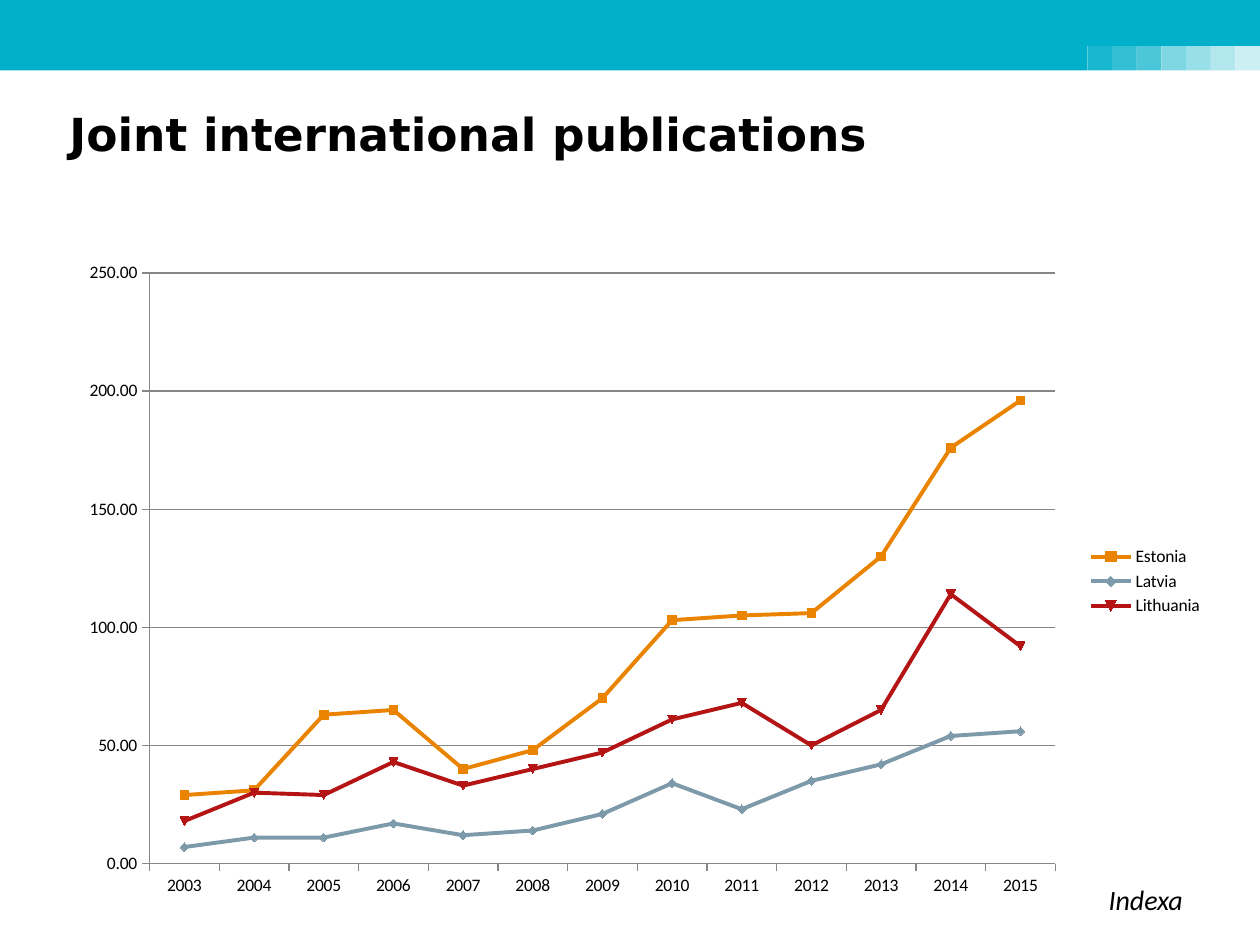
from dataclasses import dataclass

from lxml import etree
from pptx import Presentation
from pptx.chart.data import CategoryChartData
from pptx.dml.color import RGBColor
from pptx.enum import chart as ch, shapes, text
from pptx.oxml.ns import qn
from pptx.util import Pt


@dataclass(frozen=True)
class Theme:
    """Colours, fonts and type sizes of the slide."""
    band: RGBColor = RGBColor.from_string("00B0CA")
    ink: RGBColor = RGBColor.from_string("000000")
    axis: RGBColor = RGBColor.from_string("868686")
    heading: str = "DejaVu Sans"
    body: str = "Calibri"
    title_size: int = 26
    source_size: int = 16
    chart_size: int = 10


THEME = Theme()
YEARS = [str(year) for year in range(2003, 2016)]
COUNTRIES = {
    "Estonia": ("E98300", (29, 31, 63, 65, 40, 48, 70, 103, 105, 106, 130, 176, 196)),
    "Latvia": ("7D9AAA", (7, 11, 11, 17, 12, 14, 21, 34, 23, 35, 42, 54, 56)),
    "Lithuania": ("B41414", (18, 30, 29, 43, 33, 40, 47, 61, 68, 50, 65, 114, 92)),
}
FADE = (90, 80, 70, 50, 40, 30, 20)


def paint(sp, color, opacity=100):
    """Give a shape a flat fill with no line or shadow."""
    sp.shadow.inherit = False
    sp.line.fill.background()
    sp.fill.solid()
    sp.fill.fore_color.rgb = color
    if opacity < 100:
        clr = sp.fill._xPr.find(".//" + qn("a:srgbClr"))
        etree.SubElement(clr, qn("a:alpha")).set("val", str(opacity * 1000))


def add_band(s, x, y, w, h):
    """Draw the top band with its fading squares in the lower right notch."""
    side = 14.1
    notch_x, notch_y = x + w - side * len(FADE), y + h - side
    corners = [(x, y + h), (notch_x, y + h), (notch_x, notch_y),
               (x + w, notch_y), (x + w, y)]
    outline = s.shapes.build_freeform(Pt(x), Pt(y))
    outline.add_line_segments([(Pt(a), Pt(b)) for a, b in corners])
    paint(outline.convert_to_shape(), THEME.band)
    for i, opacity in enumerate(FADE):
        square = s.shapes.add_shape(
            shapes.MSO_SHAPE.RECTANGLE, Pt(notch_x + i * side), Pt(notch_y), Pt(side), Pt(side))
        paint(square, THEME.band, opacity)


def add_label(s, x, y, w, h, words, font, size, margin, wrap=True, bold=False, italic=False):
    """Place one line of text in a box."""
    tf = s.shapes.add_textbox(Pt(x), Pt(y), Pt(w), Pt(h)).text_frame
    tf.word_wrap = wrap
    tf.vertical_anchor = text.MSO_ANCHOR.TOP
    tf.margin_left = tf.margin_right = Pt(margin)
    tf.margin_top = tf.margin_bottom = Pt(3)
    r = tf.paragraphs[0].add_run()
    r.text = words
    r.font.name, r.font.size = font, Pt(size)
    r.font.bold, r.font.italic = bold, italic
    r.font.color.rgb = THEME.ink


def set_plot_area(chart, **fractions):
    """Fix the inner plot area as fractions of the chart."""
    area = chart._chartSpace.chart.plotArea
    for old in area.findall(qn("c:layout")):
        area.remove(old)
    layout = etree.Element(qn("c:layout"))
    manual = etree.SubElement(layout, qn("c:manualLayout"))
    values = {"layoutTarget": "inner", "xMode": "edge", "yMode": "edge", **fractions}
    for tag, value in values.items():
        etree.SubElement(manual, qn("c:" + tag)).set("val", str(value))
    area.insert(0, layout)


def add_publications_chart(s, x, y, w, h):
    """Plot joint publications per year as one line for each country."""
    data = CategoryChartData(number_format="0.00")
    data.categories = YEARS
    for name, (_, values) in COUNTRIES.items():
        data.add_series(name, values)
    chart = s.shapes.add_chart(
        ch.XL_CHART_TYPE.LINE_MARKERS, Pt(x), Pt(y), Pt(w), Pt(h), data).chart
    chart.has_title = False
    chart.font.name, chart.font.size = THEME.body, Pt(THEME.chart_size)
    chart.font.color.rgb = THEME.ink
    chart.has_legend = True
    chart.legend.position = ch.XL_LEGEND_POSITION.RIGHT
    chart.legend.include_in_layout = False
    set_plot_area(chart, x=0.07, y=0.03, w=0.79, h=0.9)

    value_axis = chart.value_axis
    value_axis.minimum_scale, value_axis.maximum_scale, value_axis.major_unit = 0, 250, 50
    value_axis.tick_labels.number_format = "0.00"
    value_axis.tick_labels.number_format_is_linked = False
    value_axis.has_major_gridlines = True
    for axis in (value_axis, chart.category_axis):
        axis.major_tick_mark = ch.XL_TICK_MARK.OUTSIDE
    for line in (value_axis.format.line, chart.category_axis.format.line,
                 value_axis.major_gridlines.format.line):
        line.color.rgb, line.width = THEME.axis, Pt(0.75)

    plot = chart.plots[0]
    plot.vary_by_categories = False
    for series, (color, _) in zip(plot.series, COUNTRIES.values()):
        rgb = RGBColor.from_string(color)
        series.smooth = False
        series.format.line.color.rgb, series.format.line.width = rgb, Pt(2.25)
        marker = series.marker
        marker.style, marker.size = ch.XL_MARKER_STYLE.AUTOMATIC, 5
        marker.format.fill.solid()
        marker.format.fill.fore_color.rgb = rgb
        marker.format.line.color.rgb = rgb


def main():
    """Build and save the slide."""
    prs = Presentation()
    prs.slide_width, prs.slide_height = Pt(720), Pt(540)
    s = prs.slides.add_slide(prs.slide_layouts[6])
    add_band(s, 0, 0, 720, 40.3)
    add_label(s, 36.7, 57.6, 657.4, 85, "Joint international publications",
              THEME.heading, THEME.title_size, 3, bold=True)
    add_publications_chart(s, 39.6, 144.7, 655.2, 375.1)
    add_label(s, 626.4, 501.1, 59.8, 26.6, "Indexa",
              THEME.body, THEME.source_size, 7.2, wrap=False, italic=True)
    prs.save("out.pptx")


if __name__ == "__main__":
    main()
